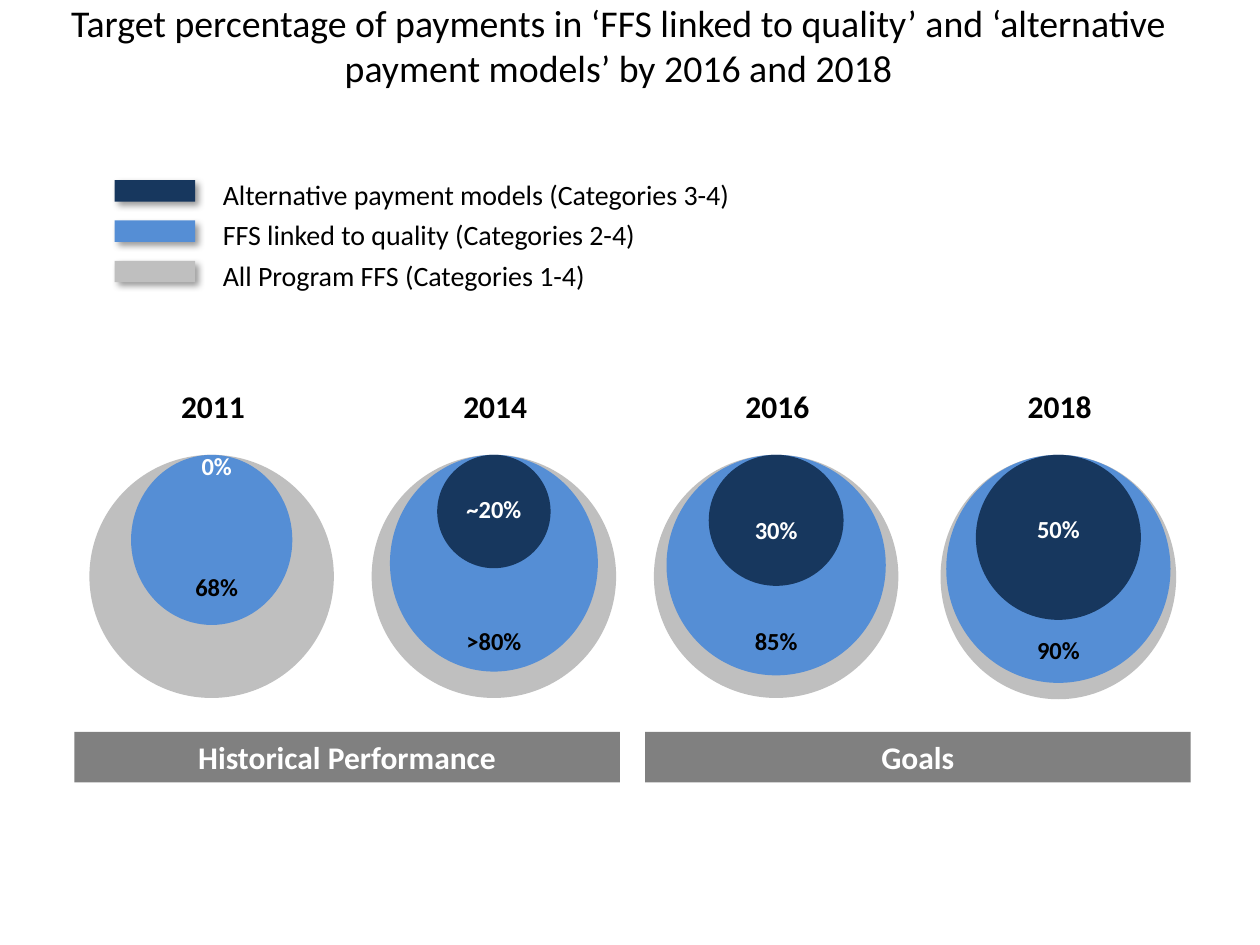
from dataclasses import dataclass

from lxml.etree import SubElement
from pptx import Presentation
from pptx.dml.color import RGBColor
from pptx.enum.shapes import MSO_SHAPE
from pptx.enum.text import MSO_ANCHOR, MSO_AUTO_SIZE, PP_ALIGN
from pptx.oxml.ns import qn
from pptx.util import Inches, Pt


@dataclass(frozen=True)
class Theme:
    font: str = "Calibri"
    black: str = "000000"
    white: str = "FFFFFF"
    navy: str = "17375E"
    blue: str = "558ED5"
    silver: str = "BFBFBF"
    gray: str = "808080"
    title_size: float = 21.6
    heading_size: float = 18
    legend_size: float = 16
    value_size: float = 14


THEME = Theme()

# Column grid and shared rows, in inches
FIRST_CENTER, COLUMN_STEP = 1.68, 2.24
YEAR_TOP, YEAR_WIDTH = 3.02, 2.08
RING_TOP = 3.61
VALUE_WIDTH, VALUE_HEIGHT = 0.75, 0.34
BANNER_TOP, BANNER_LEFT, BANNER_WIDTH, BANNER_STEP = 5.81, 0.59, 4.33, 4.53
LEGEND_TOP, LEGEND_STEP = 1.43, 0.32

RING_COLORS = (THEME.silver, THEME.blue, THEME.navy)
VALUE_COLORS = (THEME.black, THEME.white)

# Year, ring sizes from outer to inner, values with their tops, value shift
YEARS = (
    ("2011", ((1.94, 1.93), (1.28, 1.35)), (("68%", 4.49), ("0%", 3.53)), 0.04),
    ("2014", ((1.94, 1.93), (1.65, 1.72), (0.9, 0.9)),
     ((">80%", 4.92), ("~20%", 3.87)), 0),
    ("2016", ((1.94, 1.93), (1.74, 1.75), (1.07, 1.04)),
     (("85%", 4.92), ("30%", 4.04)), 0),
    ("2018", ((1.87, 1.94), (1.78, 1.81), (1.31, 1.31)),
     (("90%", 4.99), ("50%", 4.03)), 0),
)
LEGEND = (
    ("Alternative payment models (Categories 3-4)", THEME.navy),
    ("FFS linked to quality (Categories 2-4)", THEME.blue),
    ("All Program FFS (Categories 1-4)", THEME.silver),
)
TITLE = ("Target percentage of payments in ‘FFS linked to quality’ and "
         "‘alternative payment models’ by 2016 and 2018")


def write(frame, text, size, color, bold=False, align=PP_ALIGN.CENTER):
    frame.word_wrap = True
    para = frame.paragraphs[0]
    para.alignment = align
    span = para.add_run()
    span.text = text
    span.font.name = THEME.font
    span.font.size = Pt(size)
    span.font.bold = bold
    span.font.color.rgb = RGBColor.from_string(color)


def add_label(shapes, area, text, size, color, **style):
    box = shapes.add_textbox(*map(Inches, area))
    write(box.text_frame, text, size, color, **style)


def add_solid(shapes, kind, area, color):
    solid = shapes.add_shape(kind, *map(Inches, area))
    solid.shadow.inherit = False
    solid.fill.solid()
    solid.fill.fore_color.rgb = RGBColor.from_string(color)
    solid.line.fill.background()
    return solid


def add_soft_shadow(solid):
    effects = solid.fill._xPr.find(qn("a:effectLst"))
    shadow = SubElement(effects, qn("a:outerShdw"), blurRad=str(Pt(4)),
                        dist=str(Pt(3)), dir="2700000", algn="tl", rotWithShape="0")
    tint = SubElement(shadow, qn("a:srgbClr"), val=THEME.black)
    SubElement(tint, qn("a:alpha"), val="40000")


def add_title(page):
    title = page.shapes.title
    title.left, title.top, title.width, title.height = map(
        Inches, (0.1, 0.05, 9.62, 0.61))
    write(title.text_frame, TITLE, THEME.title_size, THEME.black)
    title.text_frame.vertical_anchor = MSO_ANCHOR.MIDDLE
    title.text_frame.auto_size = MSO_AUTO_SIZE.NONE


def add_legend(page):
    group = page.shapes.add_group_shape()
    for row, (text, color) in enumerate(LEGEND):
        top = LEGEND_TOP + row * LEGEND_STEP
        swatch = add_solid(group.shapes, MSO_SHAPE.RECTANGLE,
                           (0.91, top, 0.64, 0.17), color)
        add_soft_shadow(swatch)
        add_label(group.shapes, (1.67, top - 0.07, 5.03, 0.37), text,
                  THEME.legend_size, THEME.black, align=PP_ALIGN.LEFT)


def add_year(page, center, year, rings, values, shift):
    add_label(page.shapes, (center + 0.01 - YEAR_WIDTH / 2, YEAR_TOP, YEAR_WIDTH, 0.4),
              year, THEME.heading_size, THEME.black, bold=True)
    # Nested rings touch at the top
    for (width, height), color in zip(rings, RING_COLORS):
        add_solid(page.shapes, MSO_SHAPE.OVAL,
                  (center - width / 2, RING_TOP, width, height), color)
    for (text, top), color in zip(values, VALUE_COLORS):
        left = center + shift - VALUE_WIDTH / 2
        add_label(page.shapes, (left, top, VALUE_WIDTH, VALUE_HEIGHT), text,
                  THEME.value_size, color, bold=True)


def add_banner(page, column, text):
    left = BANNER_LEFT + column * BANNER_STEP
    banner = add_solid(page.shapes, MSO_SHAPE.RECTANGLE,
                       (left, BANNER_TOP, BANNER_WIDTH, 0.4), THEME.gray)
    write(banner.text_frame, text, THEME.heading_size, THEME.white, bold=True)


def main():
    deck = Presentation()
    deck.slide_width, deck.slide_height = Inches(10), Inches(7.5)
    page = deck.slides.add_slide(deck.slide_layouts[5])
    add_title(page)
    add_legend(page)
    for column, details in enumerate(YEARS):
        add_year(page, FIRST_CENTER + column * COLUMN_STEP, *details)
    for column, text in enumerate(("Historical Performance", "Goals")):
        add_banner(page, column, text)
    deck.save("out.pptx")


if __name__ == "__main__":
    main()
